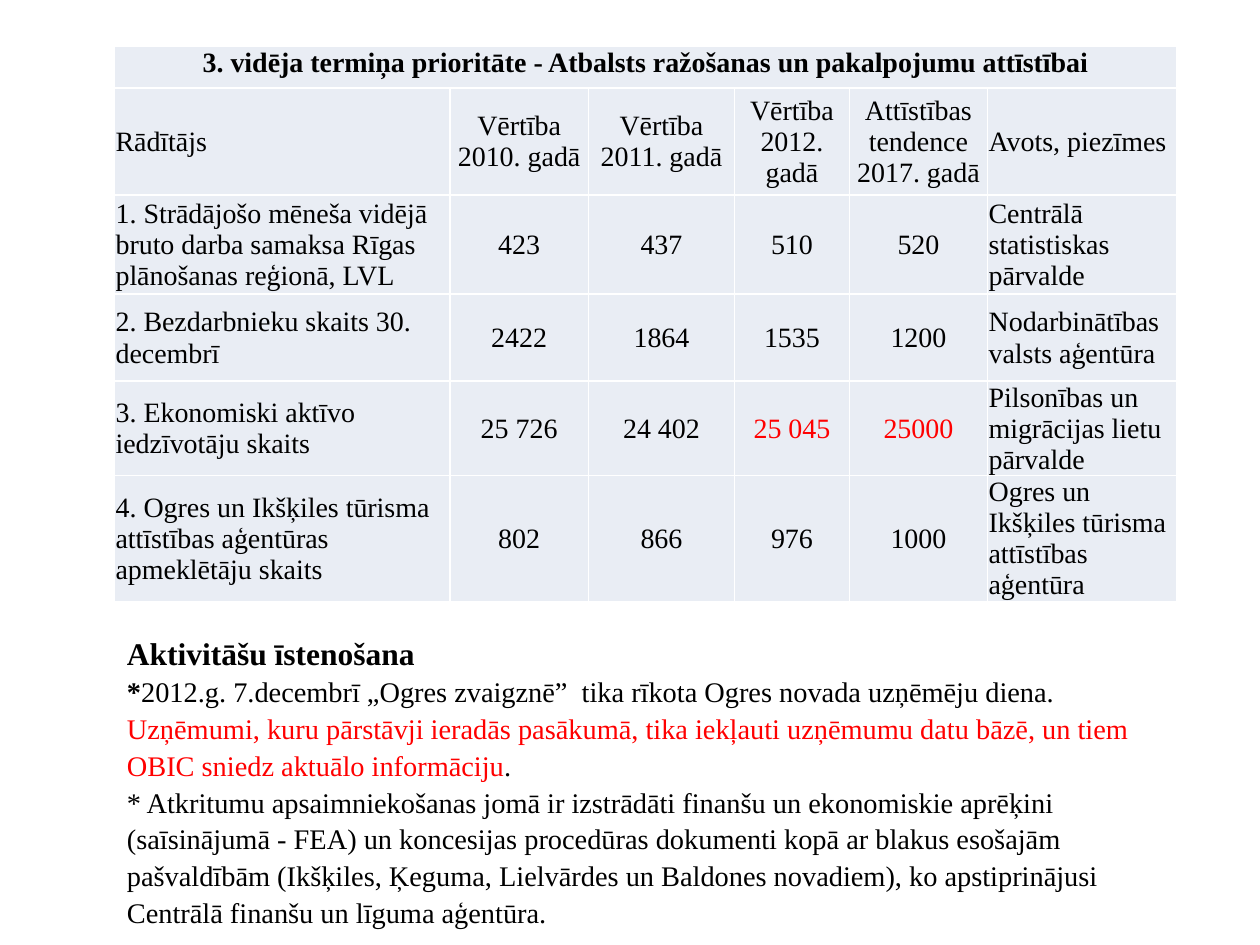
import pptx
import pptx.util
import pptx.dml.color
import pptx.enum.text
import pptx.oxml
import pptx.oxml.ns

Cm, Pt = pptx.util.Cm, pptx.util.Pt
RGBColor = pptx.dml.color.RGBColor
PP_ALIGN = pptx.enum.text.PP_ALIGN
MSO_ANCHOR = pptx.enum.text.MSO_ANCHOR

BLACK = RGBColor(0x00, 0x00, 0x00)
RED = RGBColor(0xFF, 0x00, 0x00)
WHITE = RGBColor(0xFF, 0xFF, 0xFF)
PALE_BLUE = RGBColor(0xE9, 0xED, 0xF4)
FONT = "Times New Roman"

TABLE_TITLE = "3. vidēja termiņa prioritāte - Atbalsts ražošanas un pakalpojumu attīstībai"
COLUMN_WIDTHS = [6.76, 2.79, 2.95, 2.31, 2.79, 3.81]
ROW_HEIGHTS = [0.83, 2.16, 2.0, 1.75, 1.8, 2.54]
ROWS = [
    ["Rādītājs", "Vērtība 2010. gadā", "Vērtība 2011. gadā", "Vērtība 2012. gadā",
     "Attīstības tendence 2017. gadā", "Avots, piezīmes"],
    ["1. Strādājošo mēneša vidējā bruto darba samaksa Rīgas plānošanas reģionā, LVL",
     "423", "437", "510", "520", "Centrālā statistiskas pārvalde"],
    ["2. Bezdarbnieku skaits 30. decembrī",
     "2422", "1864", "1535", "1200", "Nodarbinātības valsts aģentūra"],
    ["3. Ekonomiski aktīvo iedzīvotāju skaits",
     "25 726", "24 402", "25 045", "25000", "Pilsonības un migrācijas lietu pārvalde"],
    ["4. Ogres un Ikšķiles tūrisma attīstības aģentūras apmeklētāju skaits",
     "802", "866", "976", "1000", "Ogres un Ikšķiles tūrisma attīstības aģentūra"],
]
RED_VALUES = {"25 045", "25000"}

# Each line is a list of runs: text, size, bold, colour
ACTIVITY_LINES = [
    [("Aktivitāšu īstenošana", 18, True, BLACK)],
    [("*", 16.2, True, BLACK),
     ("2012.g. 7.decembrī „Ogres zvaigznē”  tika rīkota Ogres novada uzņēmēju diena. ",
      16.2, False, BLACK),
     ("Uzņēmumi, kuru pārstāvji ieradās pasākumā, tika iekļauti uzņēmumu datu bāzē, "
      "un tiem OBIC sniedz aktuālo informāciju", 16.2, False, RED),
     (".", 16.2, False, BLACK)],
    [("* Atkritumu apsaimniekošanas jomā ir izstrādāti finanšu un ekonomiskie aprēķini "
      "(saīsinājumā - FEA) un koncesijas procedūras dokumenti kopā ar blakus esošajām "
      "pašvaldībām (Ikšķiles, Ķeguma, Lielvārdes un Baldones novadiem), ko apstiprinājusi "
      "Centrālā finanšu un līguma aģentūra.", 16.2, False, BLACK)],
]


def add_run(p, text, size, bold, color):
    r = p.add_run()
    r.text = text
    r.font.name = FONT
    r.font.size = Pt(size)
    r.font.bold = bold
    r.font.color.rgb = color


def set_borders(cell, color, width):
    tc_pr = cell._tc.get_or_add_tcPr()
    for i, side in enumerate(("lnL", "lnR", "lnT", "lnB")):
        tc_pr.insert(i, pptx.oxml.parse_xml(
            f'<a:{side} {pptx.oxml.ns.nsdecls("a")} w="{Pt(width)}"><a:solidFill>'
            f'<a:srgbClr val="{color}"/></a:solidFill></a:{side}>'))


def fill_cell(cell, text, align, anchor, bold, color):
    cell.margin_left = cell.margin_right = cell.margin_top = Cm(0.02)
    cell.margin_bottom = 0
    cell.vertical_anchor = anchor
    p = cell.text_frame.paragraphs[0]
    p.alignment = align
    add_run(p, text, 16, bold, color)


def add_indicator_table(slide, left, top):
    frame = slide.shapes.add_table(
        len(ROW_HEIGHTS), len(COLUMN_WIDTHS), Cm(left), Cm(top),
        Cm(sum(COLUMN_WIDTHS)), Cm(sum(ROW_HEIGHTS)))
    table = frame.table
    table.first_row = table.horz_banding = False
    for column, width in zip(table.columns, COLUMN_WIDTHS):
        column.width = Cm(width)
    for row, height in zip(table.rows, ROW_HEIGHTS):
        row.height = Cm(height)
    for cell in table.iter_cells():
        cell.fill.solid()
        cell.fill.fore_color.rgb = PALE_BLUE
        set_borders(cell, WHITE, 1)

    # Title row across all columns
    last = len(COLUMN_WIDTHS) - 1
    table.cell(0, 0).merge(table.cell(0, last))
    fill_cell(table.cell(0, 0), TABLE_TITLE, PP_ALIGN.CENTER, MSO_ANCHOR.TOP, True, BLACK)

    # Headings and values: outer columns left, the others centred
    for i, values in enumerate(ROWS, start=1):
        for j, text in enumerate(values):
            align = PP_ALIGN.LEFT if j in (0, last) else PP_ALIGN.CENTER
            color = RED if text in RED_VALUES else BLACK
            fill_cell(table.cell(i, j), text, align, MSO_ANCHOR.MIDDLE, False, color)


def add_activities(slide, left, top, width, height):
    sp = slide.shapes.add_textbox(Cm(left), Cm(top), Cm(width), Cm(height))
    tf = sp.text_frame
    tf.word_wrap = True
    tf.vertical_anchor = MSO_ANCHOR.MIDDLE
    p = tf.paragraphs[0]
    p.alignment = PP_ALIGN.LEFT
    p.line_spacing = 1.08
    for i, runs in enumerate(ACTIVITY_LINES):
        if i:
            p.add_line_break()
        for run in runs:
            add_run(p, *run)


def main():
    prs = pptx.Presentation()
    prs.slide_width, prs.slide_height = Cm(25.4), Cm(19.05)
    slide = prs.slides.add_slide(prs.slide_layouts[6])
    add_indicator_table(slide, 2.31, 0.94)
    add_activities(slide, 2.31, 12.93, 21.23, 5.59)
    prs.save("out.pptx")


if __name__ == "__main__":
    main()
